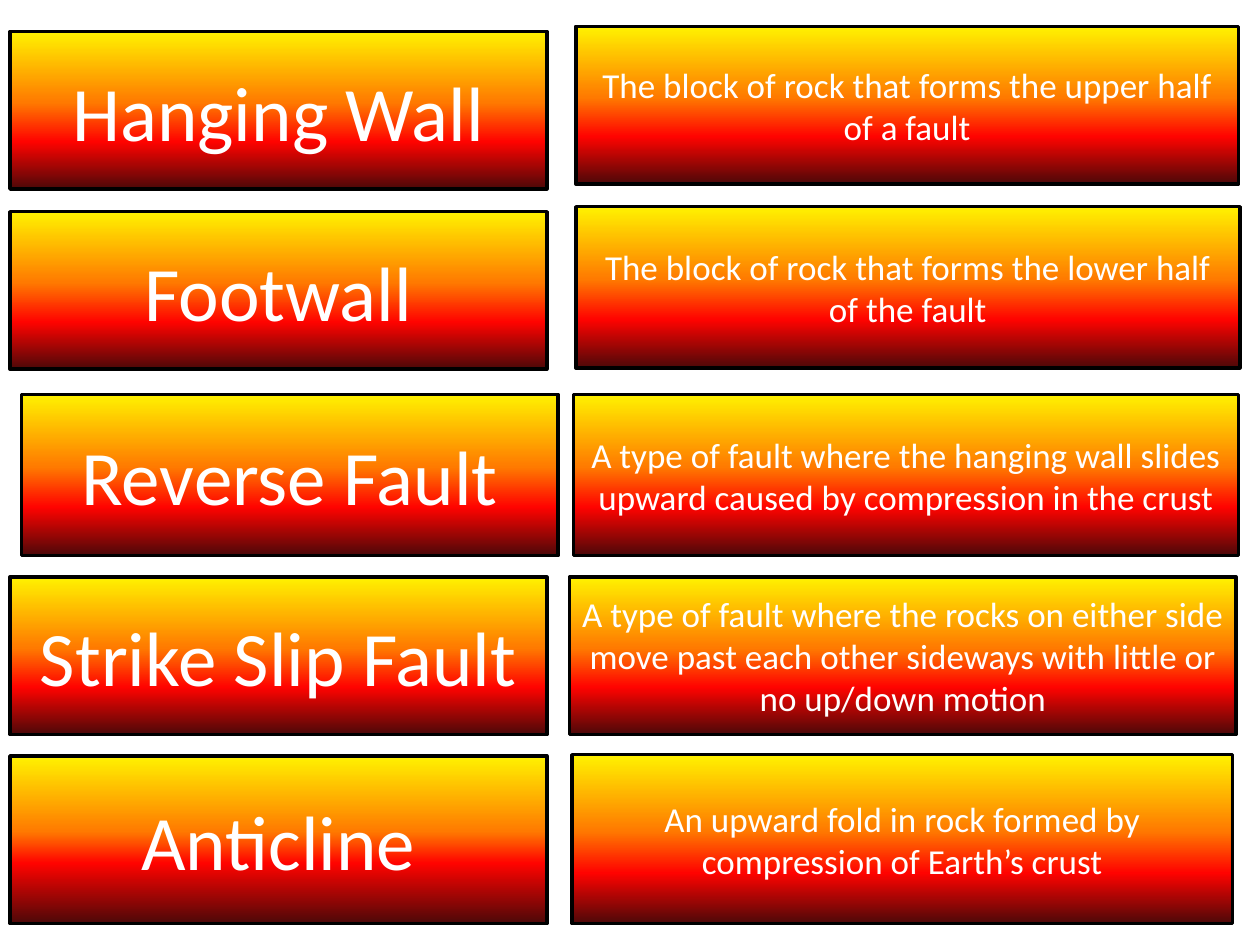
from lxml import etree
from pptx import Presentation
from pptx.dml.color import RGBColor
from pptx.enum.shapes import MSO_SHAPE
from pptx.enum.text import MSO_ANCHOR, PP_ALIGN
from pptx.oxml.ns import qn
from pptx.util import Inches, Pt

BOX = MSO_SHAPE.FLOWCHART_PROCESS
MIDDLE = MSO_ANCHOR.MIDDLE
CENTER = PP_ALIGN.CENTER

COLORS = {"yellow": "FFF200", "orange": "FF7A00", "red": "FF0300",
          "maroon": "4D0808", "line": "000000", "text": "FFFFFF"}
COLUMNS, ROWS = 100, 75
TERM_WIDTH = 42.6

# term, its (left, top, height), definition, its (left, top, width, height),
# in grid columns and rows
CARDS = [
    ("Hanging Wall", (0.8, 2.5, 12.5),
     "The block of rock that forms the upper half of a fault",
     (45.7, 2.1, 52.6, 12.5)),
    ("Footwall", (0.8, 16.8, 12.5),
     "The block of rock that forms the lower half of the fault",
     (45.7, 16.4, 52.7, 12.8)),
    ("Reverse Fault", (1.7, 31.3, 12.8),
     "A type of fault where the hanging wall slides upward caused by "
     "compression in the crust",
     (45.5, 31.3, 52.8, 12.8)),
    ("Strike Slip Fault", (0.8, 45.8, 12.5),
     "A type of fault where the rocks on either side move past each other "
     "sideways with little or no up/down motion",
     (45.2, 45.8, 52.9, 12.5)),
    ("Anticline", (0.8, 60, 13.3),
     "An upward fold in rock formed by compression of Earth’s crust",
     (45.4, 59.9, 52.4, 13.4)),
]


class Deck:
    font = "Calibri"
    term_size, definition_size = 44, 20

    def __init__(self):
        self.prs = Presentation()
        self.prs.slide_width, self.prs.slide_height = Inches(10), Inches(7.5)
        self.col = self.prs.slide_width / COLUMNS
        self.row = self.prs.slide_height / ROWS
        self.s = self.prs.slides.add_slide(self.prs.slide_layouts[6])

    def flame_fill(self, sp, red_at):
        """Fill sp from yellow at the top to maroon, with red at red_at percent."""
        sp.fill.gradient()
        sp.fill.gradient_angle = 270
        stops = sp.element.spPr.find(qn("a:gradFill")).find(qn("a:gsLst"))
        for stop in list(stops):
            stops.remove(stop)
        for name, percent in (("yellow", 0), ("orange", 45),
                              ("red", red_at), ("maroon", 100)):
            stop = etree.SubElement(stops, qn("a:gs"), pos=str(percent * 1000))
            etree.SubElement(stop, qn("a:srgbClr"), val=COLORS[name])

    def box(self, text, left, top, width, height, size, red_at=70):
        sp = self.s.shapes.add_shape(
            BOX, round(left * self.col), round(top * self.row),
            round(width * self.col), round(height * self.row))
        sp.shadow.inherit = False
        self.flame_fill(sp, red_at)
        sp.line.color.rgb = RGBColor.from_string(COLORS["line"])
        sp.line.width = Pt(2)
        tf = sp.text_frame
        tf.word_wrap = True
        tf.vertical_anchor = MIDDLE
        p = tf.paragraphs[0]
        p.text = text
        p.alignment = CENTER
        p.font.name = self.font
        p.font.size = Pt(size)
        p.font.color.rgb = RGBColor.from_string(COLORS["text"])

    def term(self, text, left, top, height):
        red_at = 64 if text == "Anticline" else 70
        self.box(text, left, top, TERM_WIDTH, height, self.term_size, red_at)

    def definition(self, text, left, top, width, height):
        self.box(text, left, top, width, height, self.definition_size)


def main():
    deck = Deck()
    for term, term_place, definition, definition_place in CARDS:
        deck.term(term, *term_place)
        deck.definition(definition, *definition_place)
    deck.prs.save("out.pptx")


if __name__ == "__main__":
    main()
